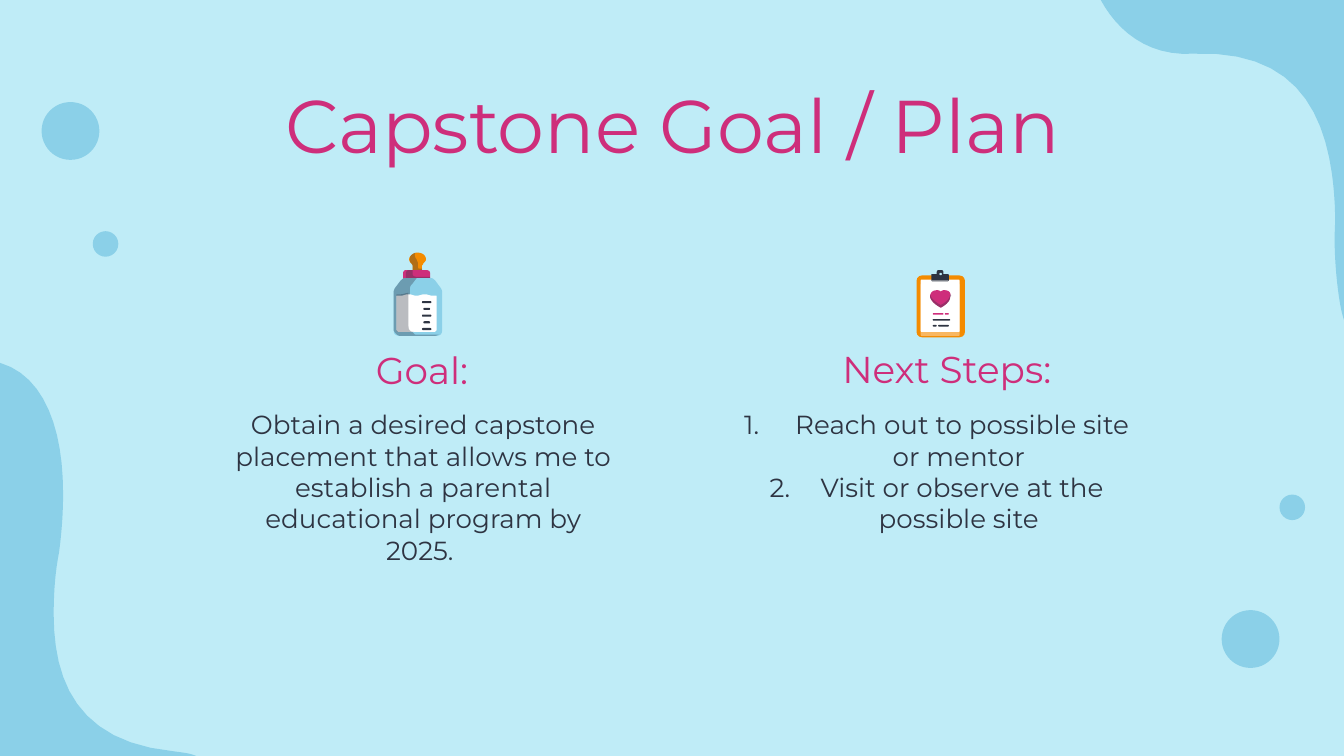
import lxml.etree
import pptx
import pptx.dml.color
import pptx.enum.shapes
import pptx.enum.text
import pptx.oxml.ns
import pptx.util

WIDTH = 10
HEIGHT = WIDTH * 9 / 16
PAGE = (0, 0, WIDTH, HEIGHT)
PAGE_GRID = (WIDTH * 100, HEIGHT * 100)
FONT = "Montserrat"
SKY, BLUE, PINK = "BFECF7", "8BD0E8", "CE2E7B"
NAVY, ORANGE, WHITE = "2E3442", "F48B00", "FFFFFF"
SHAPES = pptx.enum.shapes.MSO_SHAPE
ANCHOR = pptx.enum.text.MSO_ANCHOR


def hex_color(value):
    return pptx.dml.color.RGBColor.from_string(value)


def paint(shape, color, opacity=100):
    shape.shadow.inherit = False
    shape.line.fill.background()
    shape.fill.solid()
    shape.fill.fore_color.rgb = hex_color(color)
    if opacity < 100:
        node = shape.element.spPr.find(".//" + pptx.oxml.ns.qn("a:srgbClr"))
        alpha = lxml.etree.SubElement(node, pptx.oxml.ns.qn("a:alpha"))
        alpha.set("val", str(opacity * 1000))


def trace(steps, samples=12):
    points = [steps[0]]
    for step in steps[1:]:
        if len(step) == 2:
            points.append(step)
            continue
        start = points[-1]
        controls = [start, step[:2], step[2:4], step[4:]]
        for index in range(1, samples + 1):
            t = index / samples
            weights = ((1 - t) ** 3, 3 * t * (1 - t) ** 2, 3 * t * t * (1 - t), t ** 3)
            points.append(tuple(sum(w * c[axis] for w, c in zip(weights, controls)) for axis in (0, 1)))
    return points


def add_outline(slide, box, grid, steps, color, opacity=100):
    left, top, width, height = box
    points = [
        (pptx.util.Inches(left + x * width / grid[0]), pptx.util.Inches(top + y * height / grid[1]))
        for x, y in trace(steps)
    ]
    builder = slide.shapes.build_freeform(*points[0])
    builder.add_line_segments(points[1:], close=True)
    paint(builder.convert_to_shape(), color, opacity)


def add_preset(slide, box, grid, kind, area, color, opacity=100, rounding=None):
    left, top, width, height = box
    column, row = width / grid[0], height / grid[1]
    shape = slide.shapes.add_shape(
        kind,
        pptx.util.Inches(left + area[0] * column), pptx.util.Inches(top + area[1] * row),
        pptx.util.Inches(area[2] * column), pptx.util.Inches(area[3] * row),
    )
    if rounding is not None:
        shape.adjustments[0] = rounding
    paint(shape, color, opacity)


def write_text(shape, lines, size, color, anchor=ANCHOR.TOP, numbered=False):
    frame = shape.text_frame
    frame.word_wrap = True
    frame.auto_size = pptx.enum.text.MSO_AUTO_SIZE.NONE
    frame.vertical_anchor = anchor
    frame.margin_left = frame.margin_right = pptx.util.Inches(0.1)
    frame.margin_top = frame.margin_bottom = pptx.util.Inches(0.1)
    for index, line in enumerate(lines):
        paragraph = frame.add_paragraph() if index else frame.paragraphs[0]
        paragraph.alignment = pptx.enum.text.PP_ALIGN.CENTER
        run = paragraph.add_run()
        run.text = line
        run.font.name = FONT
        run.font.size = pptx.util.Pt(size)
        run.font.color.rgb = hex_color(color)
        if numbered:
            properties = paragraph._p.get_or_add_pPr()
            indent = pptx.util.Inches(0.38)
            properties.set("marL", str(indent))
            properties.set("indent", str(-indent))
            bullet = lxml.etree.SubElement(properties, pptx.oxml.ns.qn("a:buAutoNum"))
            bullet.set("type", "arabicPeriod")


def add_background(slide, box):
    slide.background.fill.solid()
    slide.background.fill.fore_color.rgb = hex_color(SKY)
    right, bottom = PAGE_GRID
    left_wave = [(0, 270), (34, 280, 47, 321, 47, 367), (47, 382, 46, 396, 44, 411),
                 (41, 426, 40, 442, 40, 457), (40, 506, 57, 552, 129, 559),
                 (135, 560, 140, 560, 146, bottom), (0, bottom)]
    right_wave = [(right, 0), (right, 238), (998, 232, 997, 226, 996, 219),
                  (994, 205, 993, 190, 993, 175), (994, 160, 993, 144, 991, 129),
                  (984, 80, 961, 37, 888, 40), (853, 42, 831, 22, 819, 0)]
    for wave in (left_wave, right_wave):
        add_outline(slide, box, PAGE_GRID, wave, BLUE)
    for x, y, size in ((909, 454, 43), (952, 368, 19), (31, 76, 43), (69, 172, 19)):
        add_preset(slide, box, PAGE_GRID, SHAPES.OVAL, (x, y, size, size), BLUE)


def add_bottle(slide, box):
    grid = (36, 62)
    teat = [(18, 0), (17, 0, 15, 0, 13, 2), (11, 4, 11, 6, 13, 8), (14, 9, 14, 9, 14, 10),
            (14, 15), (21, 15), (21, 10), (21, 9, 22, 9, 22, 8), (23, 7, 24, 6, 24, 5),
            (24, 2, 21, 0, 18, 0)]
    teat_shade = [(16, 0), (14, 1, 12, 2, 12, 4), (12, 6, 12, 7, 13, 8), (14, 9, 14, 10, 14, 11),
                  (14, 15), (21, 15), (21, 12), (19, 12), (18, 12, 18, 11, 18, 11), (18, 8),
                  (18, 7, 17, 6, 17, 5), (16, 4, 15, 2, 16, 0)]
    collar = [(9, 13), (8, 13, 7, 14, 7, 15), (7, 21), (27, 21), (27, 15), (27, 14, 26, 13, 24, 13)]
    collar_shade = [(11, 13), (10, 13, 9, 14, 9, 16), (9, 21), (27, 21), (27, 18), (17, 18),
                    (15, 18, 14, 17, 14, 16), (14, 13)]
    body = [(8, 19), (7, 19, 6, 20, 5, 21), (2, 25), (1, 26, 0, 28, 0, 29), (0, 58),
            (0, 61, 2, 62, 5, 62), (31, 62), (34, 62, 36, 61, 36, 58), (36, 29),
            (36, 28, 35, 26, 34, 25), (31, 21), (30, 20, 29, 19, 28, 19)]
    body_shade = body[:5] + [(0, 58, 2, 62, 5, 62), (30, 62), (32, 62, 33, 61, 34, 61), (16, 61),
                             (14, 60, 12, 56, 12, 56), (12, 27), (12, 25, 13, 24, 14, 23), (17, 19)]
    milk = [(11, 31), (8, 31, 8, 32, 5, 32), (3, 32), (2, 32, 2, 32, 2, 33), (2, 57),
            (2, 58, 3, 59, 4, 59), (30, 59), (31, 59, 32, 58, 32, 57), (32, 33),
            (32, 32, 32, 32, 31, 32), (29, 32), (26, 32, 26, 31, 23, 31),
            (20, 31, 20, 32, 17, 32), (14, 32, 14, 31, 11, 31)]
    milk_shade = [(11, 30), (8, 30, 8, 31, 5, 31), (3, 31), (2, 31, 2, 31, 2, 32), (2, 57),
                  (2, 59, 3, 59, 4, 59), (15, 59), (13, 59, 11, 58, 11, 55)]
    for base, shade, color in ((teat, teat_shade, ORANGE), (collar, collar_shade, PINK),
                               (body, body_shade, BLUE), (milk, milk_shade, WHITE)):
        add_outline(slide, box, grid, base, color)
        add_outline(slide, box, grid, shade, NAVY, 33)
    for index in range(5):
        inset = index % 2
        area = (21 + inset, 36 + 5 * index, 7 - 2 * inset, 1.6)
        add_preset(slide, box, grid, SHAPES.ROUNDED_RECTANGLE, area, NAVY, rounding=0.5)


def add_clipboard(slide, box):
    grid = (36, 50)
    heart = [(15, 15), (12, 15, 10, 17, 10, 20), (11, 24, 16, 27, 18, 28), (20, 27, 25, 24, 25, 20),
             (26, 17, 24, 15, 21, 15), (20, 15, 19, 15, 18, 16), (17, 15, 16, 15, 15, 15)]
    heart_shade = [(10, 18), (10, 19, 10, 19, 10, 20), (11, 24, 16, 27, 18, 28),
                   (20, 27, 25, 24, 25, 20), (26, 19, 26, 19, 25, 18), (25, 22, 20, 25, 18, 26),
                   (16, 25, 11, 22, 10, 18)]
    clip = [(18, 0), (16, 0, 15, 0, 15, 2), (15, 3), (12, 3), (11, 3, 11, 3, 11, 4), (11, 8),
            (12, 8.5), (23, 8.5), (24, 8), (24, 4), (24, 3, 24, 3, 23, 3), (20, 3),
            (20, 2), (20, 0, 19, 0, 18, 0)]
    rounded = SHAPES.ROUNDED_RECTANGLE
    add_preset(slide, box, grid, rounded, (0, 4, 36, 46), ORANGE, rounding=0.11)
    add_preset(slide, box, grid, rounded, (3, 10, 29, 39), WHITE, 38, 0.03)
    add_preset(slide, box, grid, rounded, (3, 7, 29, 39), WHITE, rounding=0.03)
    add_outline(slide, box, grid, heart, PINK)
    for x, y, width, color in ((21, 32, 3, PINK), (12, 32, 8, PINK), (12, 36.4, 13, NAVY),
                               (16, 40.8, 8, NAVY), (12, 40.8, 3, NAVY)):
        add_preset(slide, box, grid, rounded, (x, y, width, 1.2), color, rounding=0.5)
    add_outline(slide, box, grid, clip, NAVY)
    add_preset(slide, box, grid, SHAPES.OVAL, (17, 2, 1.8, 1.8), SKY)
    add_preset(slide, box, grid, SHAPES.RECTANGLE, (11, 7.5, 13, 1), WHITE, 38)
    add_outline(slide, box, grid, heart_shade, NAVY, 33)


def add_text_box(slide, box, lines, size, color, **options):
    shape = slide.shapes.add_textbox(*(pptx.util.Inches(value) for value in box))
    write_text(shape, lines, size, color, **options)


def add_title(slide, box, text):
    title = slide.shapes.title
    title.left, title.top, title.width, title.height = (pptx.util.Inches(value) for value in box)
    write_text(title, [text], 40, PINK)


def add_column(slide, heading_box, body_box, heading, lines, numbered=False):
    add_text_box(slide, heading_box, [heading], 20, PINK, anchor=ANCHOR.BOTTOM)
    add_text_box(slide, body_box, lines, 14, NAVY, numbered=numbered)


def main():
    presentation = pptx.Presentation()
    presentation.slide_width = pptx.util.Inches(WIDTH)
    presentation.slide_height = pptx.util.Inches(HEIGHT)
    slide = presentation.slides.add_slide(presentation.slide_layouts[5])
    add_background(slide, PAGE)
    add_title(slide, (0.79, 0.49, 8.43, 0.63), "Capstone Goal / Plan")
    add_column(slide, (1.6, 2.67, 3.08, 0.35), (1.61, 2.94, 3.08, 0.78), "Goal:",
               ["Obtain a desired capstone placement that allows me to establish "
                "a parental educational program by 2025. "])
    add_column(slide, (5.76, 2.51, 2.57, 0.5), (5.43, 2.94, 3.08, 0.78), "Next Steps:",
               ["Reach out to possible site or mentor ",
                "Visit or observe at the possible site "], numbered=True)
    add_bottle(slide, (2.93, 1.88, 0.36, 0.62))
    add_clipboard(slide, (6.82, 2.01, 0.36, 0.5))
    presentation.save("out.pptx")


if __name__ == "__main__":
    main()
